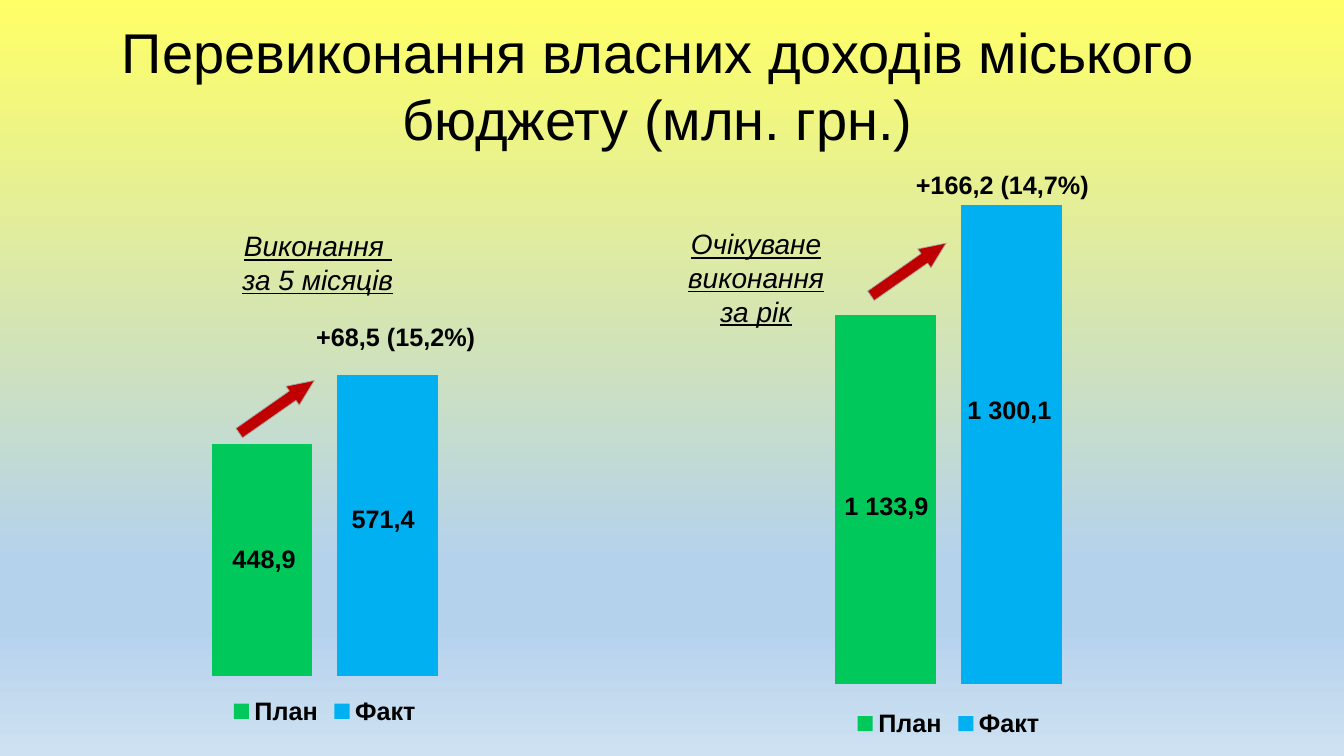
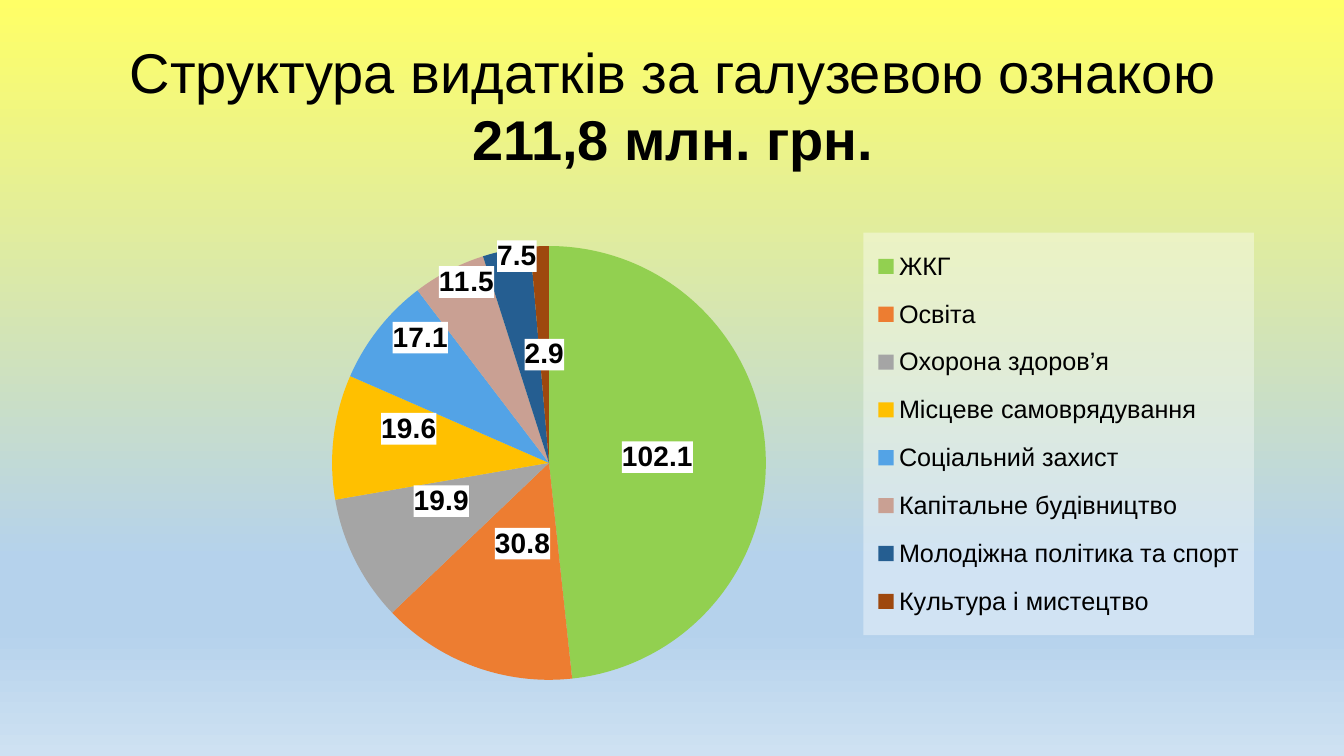
from copy import deepcopy

from pptx import Presentation, util as u
from pptx.chart.data import CategoryChartData
from pptx.dml.color import RGBColor
from pptx.enum import chart as charts, shapes, text
from pptx.oxml import parse_xml
from pptx.oxml.ns import nsdecls, qn

FONT = "Arial"
BLACK, WHITE, RED, GREY = "000000", "FFFFFF", "C00000", "A5A5A5"
PLAN_GREEN, FACT_BLUE = "00C85A", "00B0F0"
BACKGROUND_STOPS = ((0, "FFFF66"), (74, "B5D2EC"), (83, "B5D2EC"), (100, "CEE1F2"))

SECTORS = (
    # name, value, colour, label shift as a share of the chart size
    ("ЖКГ", 102.1, "92D050", None),
    ("Освіта", 30.8, "ED7D31", (0.01, -0.04)),
    ("Охорона здоров’я", 19.9, GREY, (-0.01, -0.02)),
    ("Місцеве самоврядування", 19.6, "FFC000", (-0.03, -0.04)),
    ("Соціальний захист", 17.1, "53A3E6", (-0.04, -0.11)),
    ("Капітальне будівництво", 11.5, "C9A093", (-0.03, -0.16)),
    ("Молодіжна політика та спорт", 7.5, "255E91", (-0.01, -0.19)),
    ("Культура і мистецтво", 2.9, "9E480E", None),
)


def rgb(value):
    return RGBColor.from_string(value)


def set_font(font, size, bold=False, italic=False, underline=False):
    font.name, font.size = FONT, u.Pt(size)
    font.bold, font.italic, font.underline = bold, italic, underline
    font.color.rgb = rgb(BLACK)


def write(frame, *lines, size=18, bold=False, italic=False, underline=False,
          align=None, bold_end=""):
    """Write one paragraph per line; bold_end is a bold run closing the last."""
    for index, line in enumerate(lines):
        paragraph = frame.add_paragraph() if index else frame.paragraphs[0]
        paragraph.alignment = align
        run = paragraph.add_run()
        run.text = line
        set_font(run.font, size, bold, italic, underline)
    if bold_end:
        run = paragraph.add_run()
        run.text = bold_end
        set_font(run.font, size, True, italic, underline)


def set_layout(parent, index, x, y, w=None, h=None, inner=False):
    """Give a chart part a manual layout, in shares of the chart size."""
    for old in parent.findall(qn("c:layout")):
        parent.remove(old)
    values = []
    if inner:
        values.append(("layoutTarget", "inner"))
    if w:
        values += [("xMode", "edge"), ("yMode", "edge")]
    values += [("x", x), ("y", y)]
    if w:
        values += [("w", w), ("h", h)]
    tags = "".join(f'<c:{name} val="{value}"/>' for name, value in values)
    parent.insert(index, parse_xml(
        f'<c:layout {nsdecls("c")}><c:manualLayout>{tags}</c:manualLayout></c:layout>'))


def set_panel(parent, color, opacity=100):
    """Fill the box behind a legend or data labels."""
    parent.find(qn("c:txPr")).addprevious(parse_xml(
        f'<c:spPr {nsdecls("c", "a")}><a:solidFill><a:srgbClr val="{color}">'
        f'<a:alpha val="{opacity * 1000}"/></a:srgbClr></a:solidFill></c:spPr>'))


class Deck:
    def __init__(self):
        self.presentation = Presentation()
        self.presentation.slide_width = u.Cm(33.87)
        self.presentation.slide_height = u.Cm(19.05)
        self.slide = None
        self.set_background()

    def set_background(self):
        master = self.presentation.slide_master
        fill = master.background.fill
        fill.gradient()
        fill.gradient_angle = 270
        stops = master.element.xpath(".//p:bg//a:gsLst")[0]
        for stop in list(stops):
            stops.remove(stop)
        for position, color in BACKGROUND_STOPS:
            stops.append(parse_xml(
                f'<a:gs {nsdecls("a")} pos="{position * 1000}"><a:srgbClr val="{color}"/></a:gs>'))

    def add_slide(self, title, left, top, bold_end=""):
        self.slide = self.presentation.slides.add_slide(self.presentation.slide_layouts[5])
        shape = self.slide.shapes.title
        shape.left, shape.top = u.Cm(left), u.Cm(top)
        shape.width, shape.height = u.Cm(30.4), u.Cm(3.68)
        frame = shape.text_frame
        frame.word_wrap = True
        frame.auto_size = text.MSO_AUTO_SIZE.NONE
        frame.vertical_anchor = text.MSO_ANCHOR.MIDDLE
        write(frame, title, size=40, align=text.PP_ALIGN.CENTER, bold_end=bold_end)

    def add_text(self, left, top, width, height, *lines, wrap=False, **style):
        box = self.slide.shapes.add_textbox(u.Cm(left), u.Cm(top), u.Cm(width), u.Cm(height))
        box.text_frame.word_wrap = wrap
        box.text_frame.auto_size = text.MSO_AUTO_SIZE.SHAPE_TO_FIT_TEXT
        write(box.text_frame, *lines, **style)

    def add_number(self, left, top, width, value):
        self.add_text(left, top, width, 1.02, value, bold=True)

    def add_caption(self, left, top, width, height, *lines, wrap=False):
        self.add_text(left, top, width, height, *lines, wrap=wrap, size=20,
                      italic=True, underline=True, align=text.PP_ALIGN.CENTER)

    def add_growth_arrow(self, left, top):
        arrow = self.slide.shapes.add_shape(
            shapes.MSO_SHAPE.RIGHT_ARROW, u.Cm(left), u.Cm(top), u.Cm(2.31), u.Cm(0.58))
        arrow.adjustments[0], arrow.adjustments[1] = 0.5, 1.15
        arrow.rotation = 325
        arrow.shadow.inherit = False
        arrow.fill.solid()
        arrow.fill.fore_color.rgb = rgb(RED)
        arrow.line.color.rgb = rgb(GREY)
        arrow.line.width = u.Pt(0.5)

    def add_chart(self, kind, data, left, top, width, height, plot_area,
                  legend_position, legend_bold=False):
        chart = self.slide.shapes.add_chart(
            kind, u.Cm(left), u.Cm(top), u.Cm(width), u.Cm(height), data).chart
        set_font(chart.font, 10)
        chart.has_title = False
        chart.has_legend = True
        chart.legend.position = legend_position
        chart.legend.include_in_layout = False
        set_font(chart.legend.font, 18, bold=legend_bold)
        set_layout(chart.element.xpath(".//c:plotArea")[0], 0, *plot_area, inner=True)
        return chart

    def add_plan_fact_chart(self, left, top, height, plot_top, plot_height):
        data = CategoryChartData()
        data.categories = ["1"]
        data.add_series("План", [77])
        data.add_series("Факт", [100])
        chart = self.add_chart(
            charts.XL_CHART_TYPE.COLUMN_CLUSTERED, data, left, top, 9.91, height,
            (0.02, plot_top, 0.96, plot_height), charts.XL_LEGEND_POSITION.BOTTOM, True)
        chart.category_axis.visible = False
        axis = chart.value_axis
        axis.visible = axis.has_major_gridlines = False
        axis.minimum_scale, axis.maximum_scale = 0, 100
        plot = chart.plots[0]
        plot.gap_width, plot.overlap = 150, -25
        plot.vary_by_categories = False
        for series, color in zip(plot.series, (PLAN_GREEN, FACT_BLUE)):
            series.format.fill.solid()
            series.format.fill.fore_color.rgb = rgb(color)

    def add_sector_pie(self, left, top, width, height):
        data = CategoryChartData()
        data.categories = [sector[0] for sector in SECTORS]
        data.add_series("Видатки", [sector[1] for sector in SECTORS])
        chart = self.add_chart(
            charts.XL_CHART_TYPE.PIE, data, left, top, width, height,
            (0.15, 0.09, 0.4, 0.83), charts.XL_LEGEND_POSITION.RIGHT)
        legend = chart.element.xpath(".//c:legend")[0]
        set_layout(legend, 1, 0.64, 0.07, 0.36, 0.76)
        set_panel(legend, WHITE, 39)

        plot = chart.plots[0]
        plot.vary_by_categories = True
        series = plot.series[0]
        labels = series.data_labels
        labels.show_value = True
        labels.number_format = "#,##0.0"
        labels.number_format_is_linked = False
        labels.position = charts.XL_LABEL_POSITION.CENTER
        set_font(labels.font, 20, bold=True)
        label_set = chart.element.xpath(".//c:ser/c:dLbls")[0]
        set_panel(label_set, WHITE)
        label_format = [label_set.find(qn(tag)) for tag in ("c:numFmt", "c:spPr", "c:txPr")]

        for index, (_, _, color, shift) in enumerate(SECTORS):
            point = series.points[index]
            point.format.fill.solid()
            point.format.fill.fore_color.rgb = rgb(color)
            if shift:
                point.data_label.position = charts.XL_LABEL_POSITION.CENTER
                label = label_set.findall(qn("c:dLbl"))[-1]
                for tag in ("c:spPr", "c:txPr"):
                    for old in label.findall(qn(tag)):
                        label.remove(old)
                set_layout(label, 1, *shift)
                for offset, part in enumerate(label_format):
                    label.insert(2 + offset, deepcopy(part))


def main():
    deck = Deck()

    deck.add_slide("Перевиконання власних доходів міського бюджету (млн. грн.)", 1.37, 0.3)
    deck.add_plan_fact_chart(18.95, 3.99, 14.73, 0.08, 0.82)
    deck.add_plan_fact_chart(3.23, 8.66, 9.75, 0.08, 0.78)
    deck.add_caption(5.84, 5.64, 4.34, 1.96, "Виконання ", "за 5 місяців")
    deck.add_caption(16.92, 5.59, 4.27, 2.82, "Очікуване виконання за рік", wrap=True)
    for left, top, width, value in (
        (5.61, 13.56, 2.11, "448,9"),
        (8.61, 12.55, 2.11, "571,4"),
        (7.72, 7.98, 4.55, "+68,5 (15,2%)"),
        (21.03, 12.22, 2.64, "1 133,9"),
        (24.13, 9.8, 2.64, "1 300,1"),
        (22.83, 4.14, 4.9, "+166,2 (14,7%)"),
    ):
        deck.add_number(left, top, width, value)
    deck.add_growth_arrow(5.82, 9.96)
    deck.add_growth_arrow(21.74, 6.5)

    deck.add_slide("Структура видатків за галузевою ознакою ", 1.75, 0.79,
                   bold_end="211,8 млн. грн.")
    deck.add_sector_pie(4.27, 4.93, 27.33, 13.34)

    deck.presentation.save("out.pptx")


if __name__ == "__main__":
    main()
